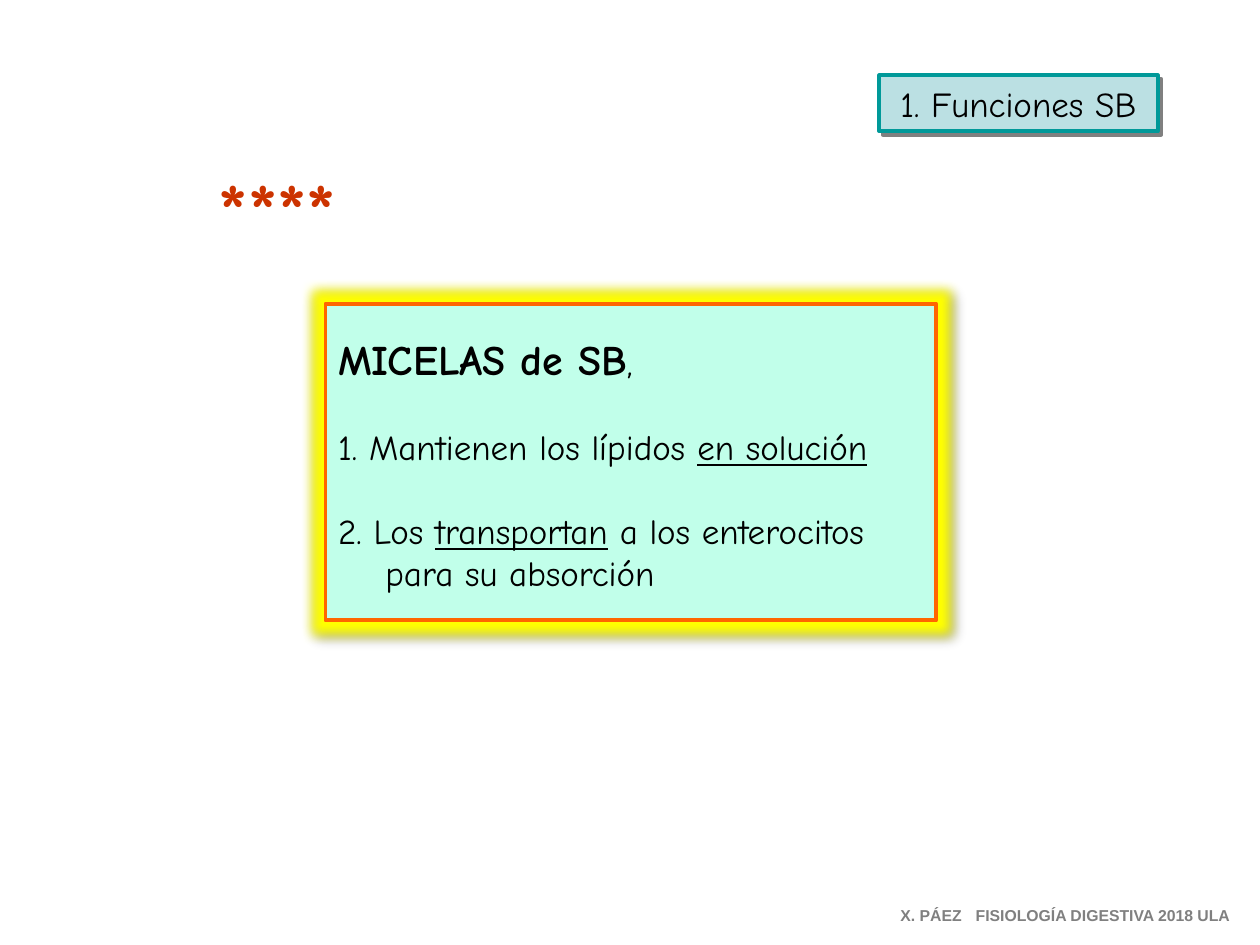
from dataclasses import dataclass

from lxml.etree import SubElement
from pptx import Presentation
from pptx.dml.color import RGBColor
from pptx.enum.text import MSO_ANCHOR as Anchor, MSO_AUTO_SIZE as AutoSize, PP_ALIGN as Align
from pptx.oxml.ns import qn
from pptx.util import Pt


@dataclass(frozen=True)
class Theme:
    hand_font: str = "Comic Neue"
    footer_font: str = "Arial"
    text: str = "000000"
    stars: str = "CC3300"
    muted: str = "808080"
    tag_fill: str = "BBE0E3"
    tag_line: str = "009999"
    panel_fill: str = "C1FFEA"
    panel_line: str = "FF6600"
    glow: str = "FFFF00"
    stars_size: int = 44
    heading_size: int = 24
    body_size: int = 20
    footer_size: int = 9
    line_width: float = 2.25


THEME = Theme()


def place(shape, left, top, width, height):
    shape.left, shape.top = Pt(left), Pt(top)
    shape.width, shape.height = Pt(width), Pt(height)


def style_box(shape, fill, line):
    shape.fill.solid()
    shape.fill.fore_color.rgb = RGBColor.from_string(fill)
    shape.line.color.rgb = RGBColor.from_string(line)
    shape.line.width = Pt(THEME.line_width)
    shape.shadow.inherit = False


def add_effect(effects, kind, color, opacity, **lengths):
    effect = SubElement(effects, qn(f"a:{kind}"))
    for name, value in lengths.items():
        effect.set(name, str(Pt(value)))
    if kind == "outerShdw":
        effect.set("dir", str(45 * 60000))
        effect.set("algn", "ctr")
        effect.set("rotWithShape", "0")
    tint = SubElement(effect, qn("a:srgbClr"), val=color)
    SubElement(tint, qn("a:alpha"), val=str(opacity * 1000))


def shape_effects(shape):
    return shape._element.spPr.find(qn("a:effectLst"))


def format_run(run, size, color=THEME.text, name=THEME.hand_font, bold=False, underline=False):
    font = run.font
    font.size, font.name = Pt(size), name
    font.bold, font.underline = bold, underline
    font.color.rgb = RGBColor.from_string(color)


def write_runs(paragraph, pieces):
    for text, style in pieces:
        run = paragraph.add_run()
        run.text = text
        format_run(run, **style)


def add_tag(title):
    place(title, 502.5, 43, 159, 32)
    style_box(title, THEME.tag_fill, THEME.tag_line)
    add_effect(shape_effects(title), "outerShdw", THEME.muted, 100, blurRad=0, dist=2.8)
    frame = title.text_frame
    frame.text = "1. Funciones SB"
    frame.word_wrap, frame.auto_size = False, AutoSize.NONE
    frame.vertical_anchor = Anchor.MIDDLE
    frame.paragraphs[0].alignment = Align.CENTER
    format_run(frame.paragraphs[0].runs[0], THEME.body_size)


def add_panel(body):
    place(body, 186, 173.5, 349, 181)
    style_box(body, THEME.panel_fill, THEME.panel_line)
    effects = shape_effects(body)
    add_effect(effects, "glow", THEME.glow, 100, rad=13)
    add_effect(effects, "outerShdw", THEME.text, 40, blurRad=4, dist=3)
    frame = body.text_frame
    frame.word_wrap, frame.auto_size = True, AutoSize.NONE
    frame.vertical_anchor = Anchor.TOP
    frame.margin_top = Pt(17)

    plain = {"size": THEME.body_size}
    underlined = {**plain, "underline": True}
    heading = {"size": THEME.heading_size, "bold": True}
    paragraphs = [
        [("MICELAS de SB", heading), (",", plain)],
        [("1. Mantienen los lípidos ", plain), ("en solución", underlined)],
        [("2. Los ", plain), ("transportan", underlined),
         (" a los enterocitos para su absorción", plain)],
    ]
    for index, pieces in enumerate(paragraphs):
        paragraph = frame.paragraphs[0] if index == 0 else frame.add_paragraph()
        paragraph.alignment = Align.LEFT
        paragraph.space_before = Pt(24 if index else 0)
        properties = paragraph._p.get_or_add_pPr()
        properties.set("marL", str(Pt(27)))
        properties.set("indent", str(Pt(-27)))
        SubElement(properties, qn("a:buNone"))
        write_runs(paragraph, pieces)


def add_label(slide, text, box, **style):
    label = slide.shapes.add_textbox(*map(Pt, box))
    frame = label.text_frame
    frame.text = text
    frame.word_wrap = False
    paragraph = frame.paragraphs[0]
    format_run(paragraph.runs[0], bold=True, **style)
    return paragraph


def add_text_shadow(run):
    fill = run._r.get_or_add_rPr().find(qn("a:solidFill"))
    effects = SubElement(fill.getparent(), qn("a:effectLst"))
    fill.addnext(effects)
    add_effect(effects, "outerShdw", THEME.text, 100, blurRad=0, dist=3)


def add_tab_stop(paragraph, position):
    stops = SubElement(paragraph._p.get_or_add_pPr(), qn("a:tabLst"))
    SubElement(stops, qn("a:tab"), pos=str(Pt(position)), algn="l")


def main():
    presentation = Presentation()
    presentation.slide_width, presentation.slide_height = Pt(720), Pt(540)
    slide = presentation.slides.add_slide(presentation.slide_layouts[1])
    add_panel(slide.placeholders[1])
    stars = add_label(slide, "****", (118, 88.5, 109, 60.5),
                      size=THEME.stars_size, color=THEME.stars)
    add_text_shadow(stars.runs[0])
    add_tag(slide.shapes.title)
    footer = add_label(slide, "X. PÁEZ\tFISIOLOGÍA DIGESTIVA 2018 ULA", (507.5, 514, 205, 18),
                       size=THEME.footer_size, color=THEME.muted, name=THEME.footer_font)
    add_tab_stop(footer, 43)
    presentation.save("out.pptx")


if __name__ == "__main__":
    main()
